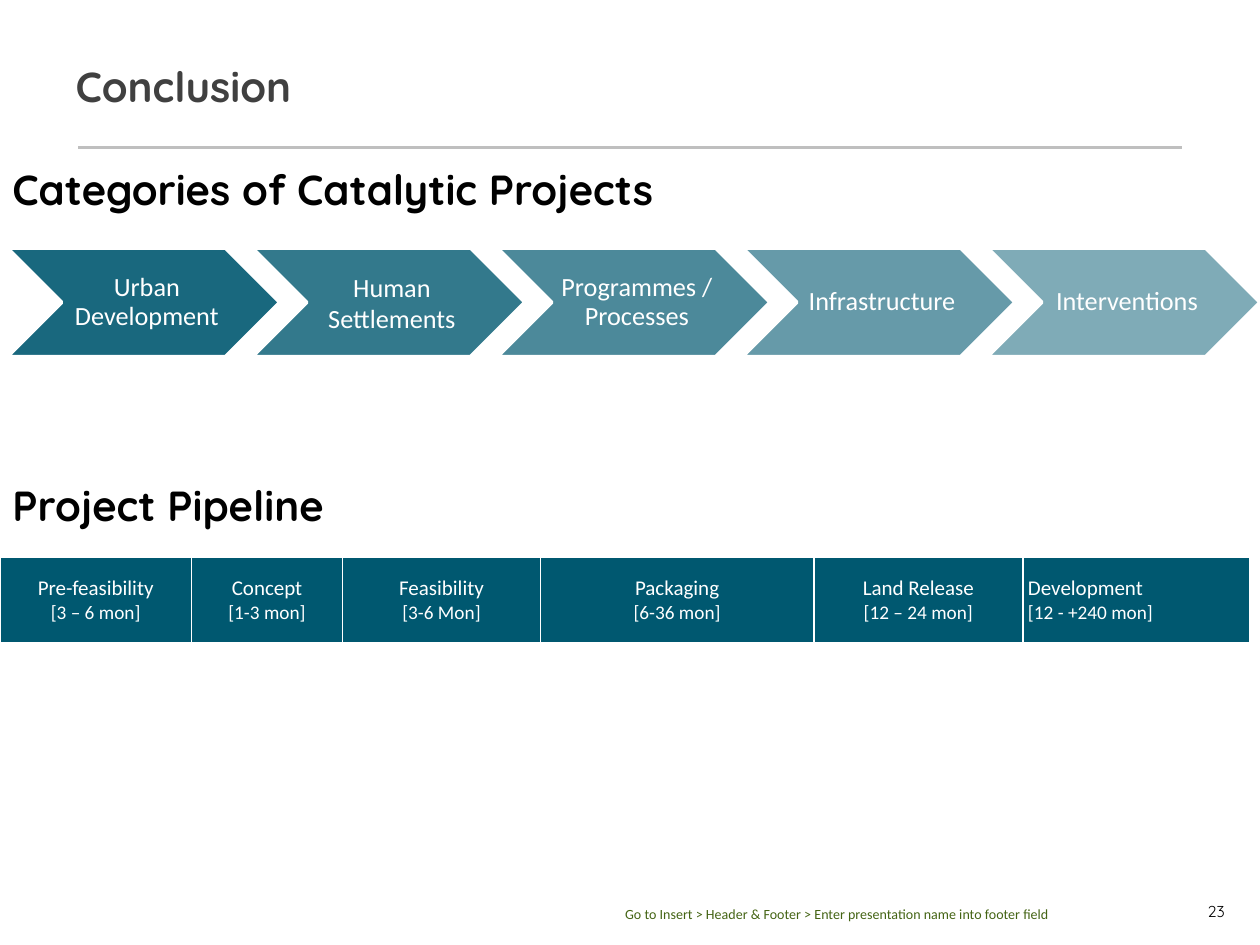
from dataclasses import dataclass

from lxml import etree
from pptx import Presentation
from pptx.dml.color import RGBColor
from pptx.enum.shapes import MSO_CONNECTOR, MSO_SHAPE
from pptx.enum.text import MSO_ANCHOR, PP_ALIGN
from pptx.oxml.ns import qn
from pptx.util import Inches, Pt

LEFT, CENTER, RIGHT = PP_ALIGN.LEFT, PP_ALIGN.CENTER, PP_ALIGN.RIGHT
TOP, MIDDLE, BOTTOM = MSO_ANCHOR.TOP, MSO_ANCHOR.MIDDLE, MSO_ANCHOR.BOTTOM
CHEVRON, STRAIGHT = MSO_SHAPE.CHEVRON, MSO_CONNECTOR.STRAIGHT
TITLE_ONLY = 5


@dataclass(frozen=True)
class Theme:
    heading_font: str = "Quicksand"
    body_font: str = "Calibri"
    teal: str = "005870"
    white: str = "FFFFFF"
    black: str = "000000"
    title: str = "404040"
    rule: str = "BFBFBF"
    footer: str = "446414"
    heading_size: int = 24
    chevron_size: int = 15
    stage_size: int = 12
    duration_size: int = 11
    number_size: int = 9
    footer_size: int = 8


T = Theme()
WIDTH, HEIGHT = 10, 7.5
CATEGORIES = ["Urban Development", "Human Settlements", "Programmes / Processes",
              "Infrastructure", "Interventions"]
LOOSE_CATEGORY = "Human Settlements"
STAGES = [("Pre-feasibility", "[3 – 6 mon]", 1.52),
          ("Concept", "[1-3 mon]", 1.2),
          ("Feasibility", "[3-6 Mon]", 1.57),
          ("Packaging", "[6-36 mon]", 2.17),
          ("Land Release", "[12 – 24 mon]", 1.66),
          ("Development", "[12 - +240 mon]", 1.8)]


def rgb(color):
    return RGBColor.from_string(color)


def inches(box):
    return [Inches(v) for v in box]


def write(p, text, *, size, color, font=T.body_font, bold=False, align=LEFT, spacing=None):
    p.alignment = align
    if spacing:
        p.line_spacing = spacing
    r = p.add_run()
    r.text = text
    r.font.name, r.font.size, r.font.bold = font, Pt(size), bold
    r.font.color.rgb = rgb(color)


def set_frame(tf, anchor, insets=(0.1, 0.05, 0.1, 0.05)):
    tf.word_wrap = True
    tf.vertical_anchor = anchor
    tf.margin_left, tf.margin_top, tf.margin_right, tf.margin_bottom = inches(insets)


def add_text(s, box, text, *, anchor=TOP, insets=(0.1, 0.05, 0.1, 0.05), **style):
    tf = s.shapes.add_textbox(*inches(box)).text_frame
    set_frame(tf, anchor, insets)
    write(tf.paragraphs[0], text, **style)


def add_title(s, box, text):
    """Fill the title placeholder and draw the rule below it."""
    sp = s.shapes.title
    sp.left, sp.top, sp.width, sp.height = inches(box)
    set_frame(sp.text_frame, MIDDLE)
    write(sp.text_frame.paragraphs[0], text, size=T.heading_size, color=T.title,
          font=T.heading_font, bold=True)
    left, top, width, height = box
    margin, y = 0.12, top + height + 0.11
    line = s.shapes.add_connector(STRAIGHT, *inches((left + margin, y, left + width - margin, y)))
    line.line.color.rgb, line.line.width = rgb(T.rule), Pt(2)
    etree.SubElement(line._element.spPr, qn("a:effectLst"))


def add_heading(s, box, text):
    add_text(s, box, text, size=T.heading_size, color=T.black, font=T.heading_font, bold=True)


def add_chevrons(s, box, labels):
    """Spread chevrons over the box, each overlapping the next by a tenth and fading."""
    left, top, width, height = box
    chevron = width / (1 + 0.9 * (len(labels) - 1))
    for i, label in enumerate(labels):
        sp = s.shapes.add_shape(CHEVRON, *inches((left + 0.9 * chevron * i, top, chevron, height)))
        sp.shadow.inherit = False
        sp.fill.solid()
        sp.fill.fore_color.rgb = rgb(T.teal)
        color = sp._element.spPr.find(qn("a:solidFill"))[0]
        etree.SubElement(color, qn("a:alpha"), val=str(90000 - 10000 * i))
        sp.line.color.rgb, sp.line.width = rgb(T.white), Pt(2)
        set_frame(sp.text_frame, MIDDLE, (0.07, 0.02, 0.02, 0.02))
        write(sp.text_frame.paragraphs[0], label, size=T.chevron_size, color=T.white,
              align=CENTER, spacing=None if label == LOOSE_CATEGORY else 0.9)


def set_borders(cell):
    tc_pr = cell._tc.get_or_add_tcPr()
    for side, width in (("L", 1), ("R", 1), ("T", 1), ("B", 3)):
        ln = etree.SubElement(tc_pr, qn(f"a:ln{side}"), w=str(Pt(width)))
        fill = etree.SubElement(ln, qn("a:solidFill"))
        etree.SubElement(fill, qn("a:srgbClr"), val=T.white)


def add_pipeline(s, box, stages):
    table = s.shapes.add_table(1, len(stages), *inches(box)).table
    for i, (name, duration, width) in enumerate(stages):
        table.columns[i].width = Inches(width)
        cell = table.cell(0, i)
        set_borders(cell)
        cell.fill.solid()
        cell.fill.fore_color.rgb = rgb(T.teal)
        cell.vertical_anchor = MIDDLE
        cell.margin_left = cell.margin_right = Inches(0.04)
        cell.margin_top = cell.margin_bottom = Inches(0.05)
        tf = cell.text_frame
        style = dict(color=T.white, align=LEFT if name == "Development" else CENTER)
        write(tf.paragraphs[0], name, size=T.stage_size, **style)
        write(tf.add_paragraph(), duration, size=T.duration_size, **style)


def add_footer(s, top, height):
    add_text(s, (0.916 * WIDTH, top, 0.056 * WIDTH, height), "23", anchor=MIDDLE,
             insets=(0.08, 0.08, 0, 0), size=T.number_size, color=T.black,
             font=T.heading_font, align=RIGHT)
    add_text(s, (0.442 * WIDTH, top, 0.453 * WIDTH, height),
             "Go to Insert > Header & Footer > Enter presentation name into footer field",
             anchor=BOTTOM, insets=(0, 0.08, 0.08, 0), size=T.footer_size,
             color=T.footer, align=CENTER)


def main():
    prs = Presentation()
    prs.slide_width, prs.slide_height = Inches(WIDTH), Inches(HEIGHT)
    s = prs.slides.add_slide(prs.slide_layouts[TITLE_ONLY])
    add_title(s, (0.05 * WIDTH, 0.04 * HEIGHT, 0.9 * WIDTH, 0.76), "Conclusion")
    add_heading(s, (0, 1.25, 5.55, 0.5), "Categories of Catalytic Projects")
    add_chevrons(s, (0.06, 1.97, WIDTH - 0.06, 0.86), CATEGORIES)
    add_heading(s, (0, 3.76, 5.55, 0.5), "Project Pipeline")
    add_pipeline(s, (0, 4.42, sum(width for *_, width in STAGES), 0.69), STAGES)
    add_footer(s, 7.07, 0.25)
    prs.save("out.pptx")


if __name__ == "__main__":
    main()
